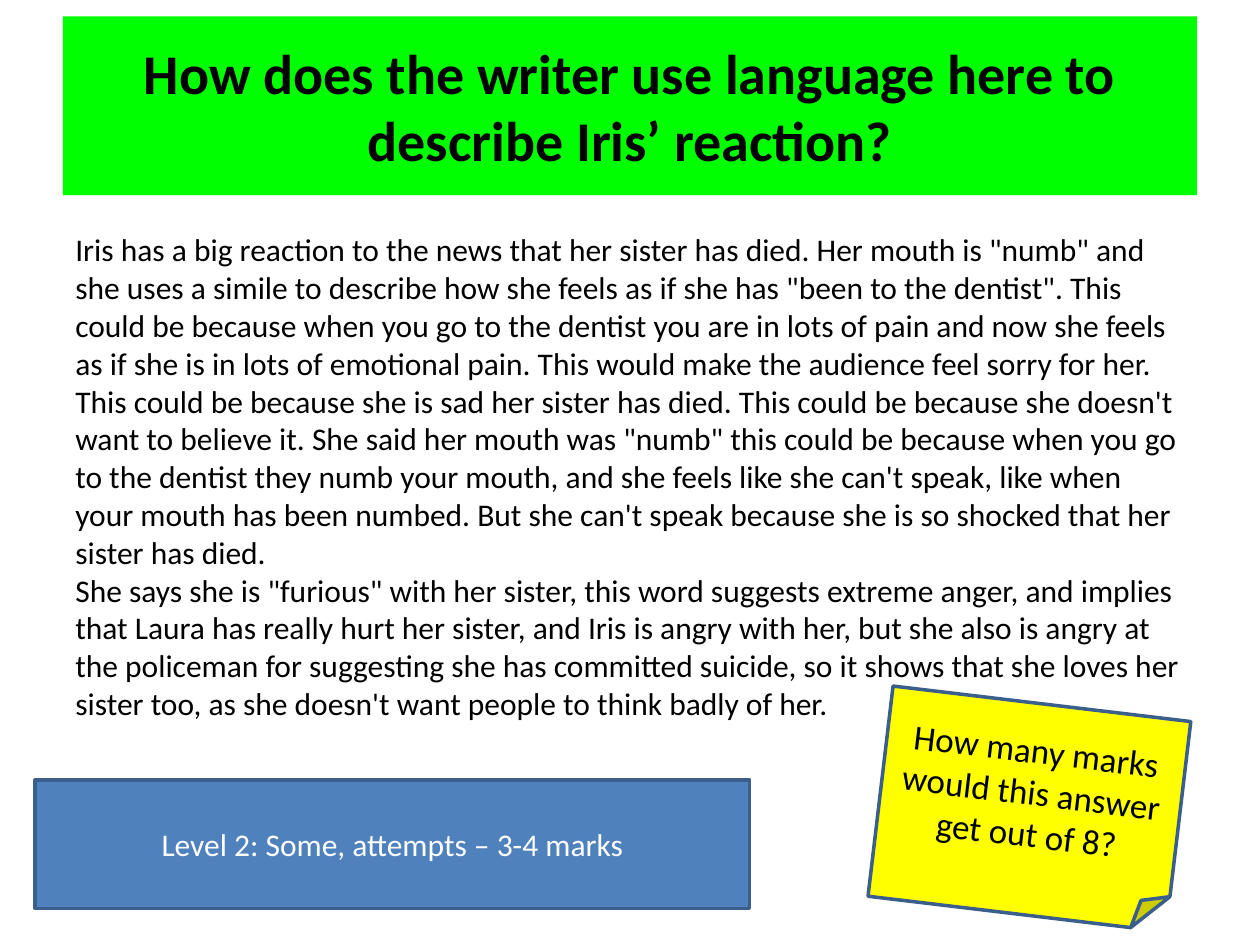
from dataclasses import dataclass
from typing import Any

from pptx import Presentation
from pptx.dml.color import RGBColor
from pptx.enum.shapes import MSO_SHAPE as Shape
from pptx.enum.text import MSO_ANCHOR as Anchor, PP_ALIGN as Align
from pptx.util import Inches, Pt

ANSWER = (
    "Iris has a big reaction to the news that her sister has died. "
    "Her mouth is \"numb\" and she uses a simile to describe how she feels "
    "as if she has \"been to the dentist\". This could be because when you go "
    "to the dentist you are in lots of pain and now she feels as if she is in "
    "lots of emotional pain. This would make the audience feel sorry for her. "
    "This could be because she is sad her sister has died. This could be "
    "because she doesn't want to believe it. She said her mouth was \"numb\" "
    "this could be because when you go to the dentist they numb your mouth, "
    "and she feels like she can't speak, like when your mouth has been numbed. "
    "But she can't speak because she is so shocked that her sister has died.",
    "She says she is \"furious\" with her sister, this word suggests extreme "
    "anger, and implies that Laura has really hurt her sister, and Iris is "
    "angry with her, but she also is angry at the policeman for suggesting she "
    "has committed suicide, so it shows that she loves her sister too, as she "
    "doesn't want people to think badly of her.",
)


def color(code):
    """Turn a hex string into a colour."""
    return RGBColor.from_string(code)


@dataclass
class Board:
    """Hold the style and the current page; lengths are columns and rows of a 100 by 100 grid."""

    deck: Any
    page: Any
    font: str = "Calibri"
    ink: str = "000000"
    outline: str = "3A5F8C"

    def area(self, left, top, width, height):
        """Turn grid columns and rows into slide lengths."""
        column, row = self.deck.slide_width / 100, self.deck.slide_height / 100
        return [round(n * unit) for n, unit in
                zip((left, top, width, height), (column, row, column, row))]

    def set_text(self, box, text, size, align, anchor, ink=None, bold=False):
        """Fill a box with styled text."""
        frame = box.text_frame
        frame.word_wrap = True
        frame.vertical_anchor = anchor
        frame.text = text
        for para in frame.paragraphs:
            para.alignment = align
            for span in para.runs:
                span.font.name = self.font
                span.font.size = Pt(size)
                span.font.bold = bold
                span.font.color.rgb = color(ink or self.ink)

    def passage(self, place, paragraphs, size):
        """Add a plain text box with left-aligned paragraphs."""
        box = self.page.shapes.add_textbox(*self.area(*place))
        self.set_text(box, "\n".join(paragraphs), size, Align.LEFT, Anchor.TOP)

    def panel(self, place, text, size, fill, kind=Shape.RECTANGLE,
              lined=True, turn=0, **style):
        """Add a filled shape with centred text."""
        box = self.page.shapes.add_shape(kind, *self.area(*place))
        box.shadow.inherit = False
        box.rotation = turn
        box.fill.solid()
        box.fill.fore_color.rgb = color(fill)
        if lined:
            box.line.color.rgb = color(self.outline)
            box.line.width = Pt(2)
        else:
            box.line.fill.background()
        self.set_text(box, text, size, Align.CENTER, Anchor.MIDDLE, **style)


def main():
    """Build the slide and save it."""
    deck = Presentation()
    deck.slide_width, deck.slide_height = Inches(10), Inches(7.5)
    board = Board(deck, deck.slides.add_slide(deck.slide_layouts[6]))
    board.panel((5, 1.73, 90, 18.93),
                "How does the writer use language here to describe Iris’ reaction?",
                32, "00FF00", lined=False, bold=True)
    board.passage((5, 23.73, 90, 53.87), ANSWER, 18)
    board.panel((69.8, 74.4, 23.8, 22.4),
                "How many marks would this answer get out of 8?",
                20, "FFFF00", kind=Shape.FOLDED_CORNER, turn=6.8)
    board.panel((2.8, 82.53, 56.7, 13.6),
                "Level 2: Some, attempts – 3-4 marks", 18, "4F81BD", ink="FFFFFF")
    deck.save("out.pptx")


if __name__ == "__main__":
    main()
